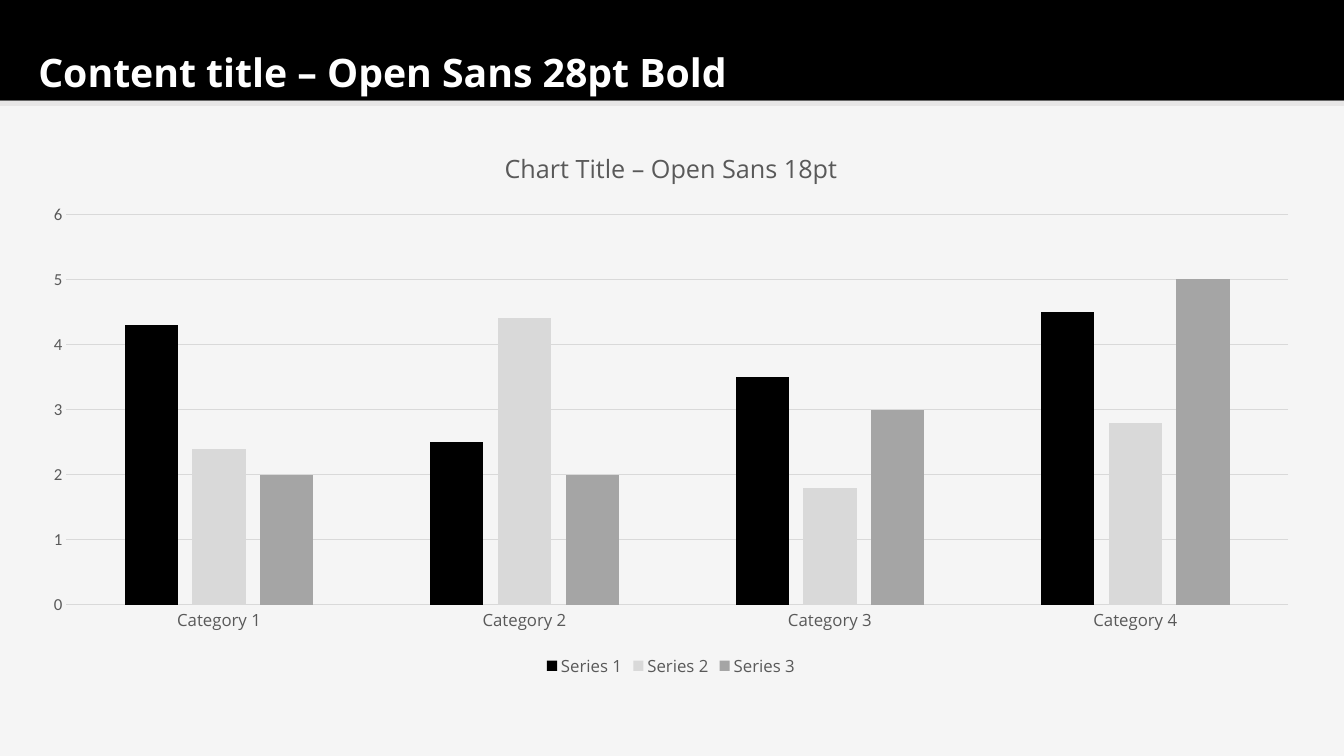
"""Build a content slide with a title band and a clustered column chart."""
from pptx import Presentation
from pptx.chart.data import CategoryChartData
from pptx.dml.color import RGBColor
from pptx.enum.chart import XL_CHART_TYPE, XL_LEGEND_POSITION, XL_TICK_MARK
from pptx.enum.shapes import MSO_SHAPE
from pptx.enum.text import MSO_ANCHOR, MSO_AUTO_SIZE, PP_ALIGN
from pptx.util import Inches, Pt

RECTANGLE = MSO_SHAPE.RECTANGLE
COLUMNS = XL_CHART_TYPE.COLUMN_CLUSTERED
LEGEND_BOTTOM = XL_LEGEND_POSITION.BOTTOM
NO_TICK = XL_TICK_MARK.NONE
ANCHOR_BOTTOM = MSO_ANCHOR.BOTTOM
NO_AUTOFIT = MSO_AUTO_SIZE.NONE
ALIGN_LEFT = PP_ALIGN.LEFT

BLACK = RGBColor(0x00, 0x00, 0x00)
WHITE = RGBColor(0xFF, 0xFF, 0xFF)
PAPER = RGBColor(0xF5, 0xF5, 0xF5)
RULE_GRAY = RGBColor(0xE7, 0xE6, 0xE6)
LIGHT_GRAY = RGBColor(0xD9, 0xD9, 0xD9)
MID_GRAY = RGBColor(0xA5, 0xA5, 0xA5)
TEXT_GRAY = RGBColor(0x59, 0x59, 0x59)

HEADING_FONT = "Open Sans"
NUMBER_FONT = "Calibri"
SERIES = [
    ("Series 1", (4.3, 2.5, 3.5, 4.5), BLACK),
    ("Series 2", (2.4, 4.4, 1.8, 2.8), LIGHT_GRAY),
    ("Series 3", (2, 2, 3, 5), MID_GRAY),
]


def style_font(font, name, size, color, bold=False):
    font.name = name
    font.size = Pt(size)
    font.color.rgb = color
    font.bold = bold


deck = Presentation()
deck.slide_width = Inches(13.33)
deck.slide_height = Inches(7.5)
page = deck.slides.add_slide(deck.slide_layouts[5])
page.background.fill.solid()
page.background.fill.fore_color.rgb = PAPER

title = page.shapes.title
for top, height, color in ((0, 1, BLACK), (1, 0.05, RULE_GRAY)):
    band = page.shapes.add_shape(
        RECTANGLE, 0, Inches(top), deck.slide_width, Inches(height))
    band.shadow.inherit = False
    band.fill.solid()
    band.fill.fore_color.rgb = color
    band.line.fill.background()
    title.element.addprevious(band.element)

title.left, title.top = Inches(0.28), Inches(0)
title.width, title.height = Inches(12.75), Inches(1)
frame = title.text_frame
frame.text = "Content title – Open Sans 28pt Bold"
frame.word_wrap = True
frame.auto_size = NO_AUTOFIT
frame.vertical_anchor = ANCHOR_BOTTOM
para = frame.paragraphs[0]
para.alignment = ALIGN_LEFT
para.line_spacing = 0.9
style_font(para.runs[0].font, HEADING_FONT, 28, WHITE, bold=True)

data = CategoryChartData()
data.categories = [f"Category {number}" for number in range(1, 5)]
for name, values, color in SERIES:
    data.add_series(name, values)
chart = page.shapes.add_chart(
    COLUMNS, Inches(0.28), Inches(1.26), Inches(12.75), Inches(5.5), data).chart
style_font(chart.font, NUMBER_FONT, 10, BLACK)

chart.has_title = True
chart.chart_title.include_in_layout = False
heading = chart.chart_title.text_frame
heading.text = "Chart Title – Open Sans 18pt"
style_font(heading.paragraphs[0].runs[0].font, HEADING_FONT, 18, TEXT_GRAY)

chart.has_legend = True
chart.legend.position = LEGEND_BOTTOM
chart.legend.include_in_layout = False
style_font(chart.legend.font, HEADING_FONT, 12, TEXT_GRAY)

plot = chart.plots[0]
plot.gap_width = 219
plot.overlap = -27
plot.vary_by_categories = False
for series, (name, values, color) in zip(plot.series, SERIES):
    series.invert_if_negative = False
    series.format.fill.solid()
    series.format.fill.fore_color.rgb = color

category_axis, value_axis = chart.category_axis, chart.value_axis
for axis, font_name in ((category_axis, HEADING_FONT), (value_axis, NUMBER_FONT)):
    axis.major_tick_mark = NO_TICK
    axis.minor_tick_mark = NO_TICK
    style_font(axis.tick_labels.font, font_name, 12, TEXT_GRAY)

value_axis.minimum_scale = 0
value_axis.maximum_scale = 6
value_axis.major_unit = 1
value_axis.has_major_gridlines = True
value_axis.format.line.fill.background()
for line in (category_axis.format.line, value_axis.major_gridlines.format.line):
    line.color.rgb = LIGHT_GRAY
    line.width = Pt(0.75)

deck.save("out.pptx")
